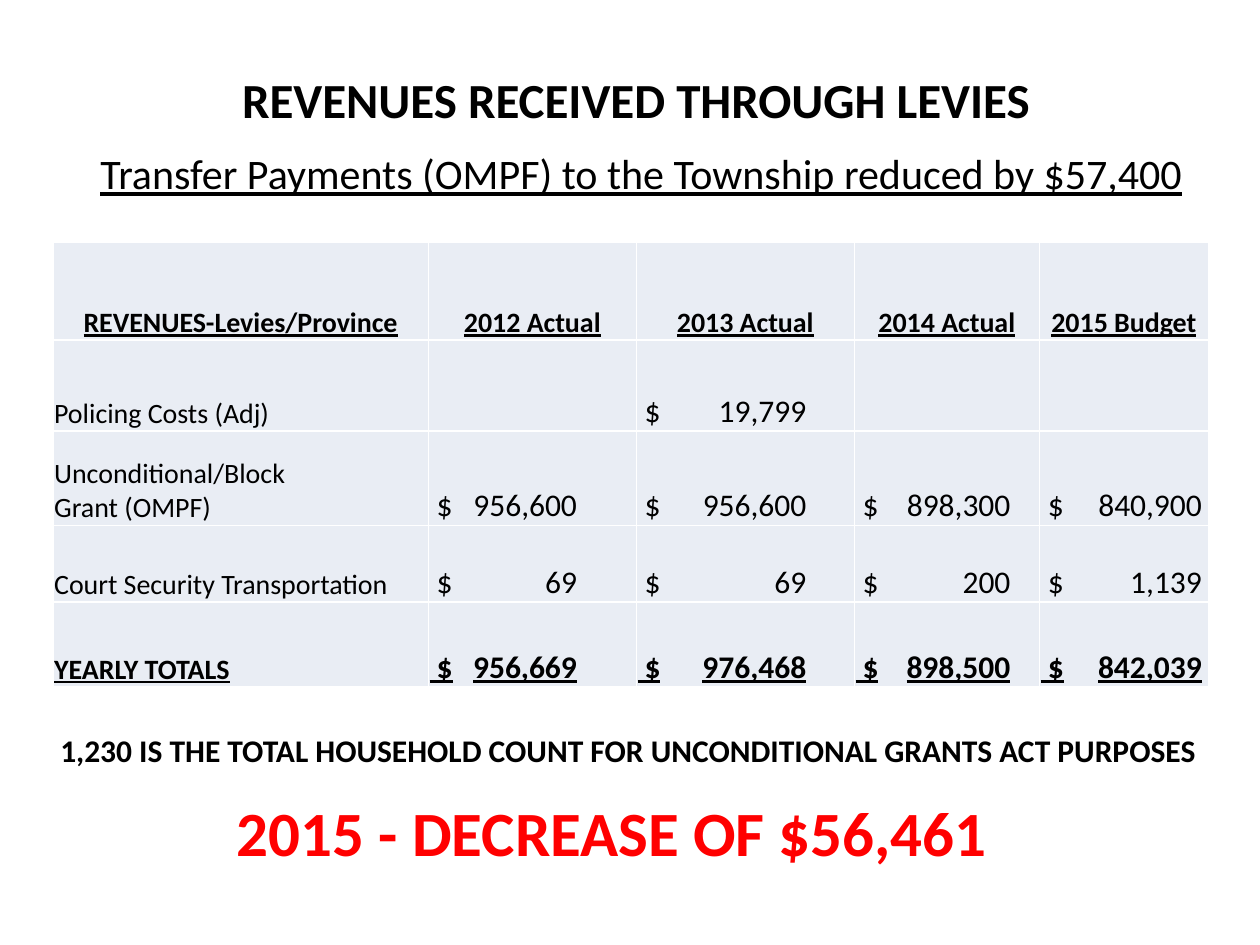
from lxml import etree
from pptx import Presentation
from pptx import util as u
from pptx.dml.color import RGBColor
from pptx.enum import text
from pptx.oxml import ns

BLACK = RGBColor(0, 0, 0)
RED = RGBColor(255, 0, 0)
WHITE = RGBColor(255, 255, 255)
PALE = RGBColor(0xE9, 0xED, 0xF4)
FONT = "Calibri"
CENTER = text.PP_ALIGN.CENTER
LEFT = text.PP_ALIGN.LEFT
UNIT = u.Inches(0.1)

COL_WIDTHS = [29.8, 16.5, 17.3, 14.7, 13.4]
ROW_HEIGHTS = [7.8, 7.2, 7.5, 6.1, 6.7]
AMOUNT_ENDS = [11.7, 13.4, 12.3, 12.8]
HEADERS = ["REVENUES-Levies/Province", "2012 Actual", "2013 Actual",
           "2014 Actual", "2015 Budget"]
REVENUES = [
    ("Policing Costs (Adj)", ["", "19,799", "", ""]),
    ("Unconditional/Block\nGrant (OMPF)",
     ["956,600", "956,600", "898,300", "840,900"]),
    ("Court Security Transportation", ["69", "69", "200", "1,139"]),
    ("YEARLY TOTALS", ["956,669", "976,468", "898,500", "842,039"]),
]


def grid(*cells):
    return [round(c * UNIT) for c in cells]


def write(tf, content, size=18, bold=False, underline=False,
          color=BLACK, align=LEFT, tab=None):
    for i, line in enumerate(content.split("\n")):
        p = tf.add_paragraph() if i else tf.paragraphs[0]
        p.alignment = align
        if tab:
            tabs = etree.SubElement(p._p.get_or_add_pPr(), ns.qn("a:tabLst"))
            etree.SubElement(tabs, ns.qn("a:tab"),
                             pos=str(round(tab * UNIT)), algn="r")
        r = p.add_run()
        r.text = line
        f = r.font
        f.name, f.size, f.bold, f.underline = FONT, u.Pt(size), bold, underline
        f.color.rgb = color


def add_title(slide, box, content):
    sp = slide.shapes.title
    sp.left, sp.top, sp.width, sp.height = grid(*box)
    tf = sp.text_frame
    tf.auto_size = text.MSO_AUTO_SIZE.NONE
    tf.vertical_anchor = text.MSO_ANCHOR.TOP
    write(tf, content, size=28, bold=True, align=CENTER)


def add_label(slide, box, content, **fmt):
    tf = slide.shapes.add_textbox(*grid(*box)).text_frame
    tf.word_wrap = True
    write(tf, content, **fmt)


def format_cell(cell):
    cell.margin_left = cell.margin_right = cell.margin_top = u.Inches(0.01)
    cell.margin_bottom = 0
    cell.vertical_anchor = text.MSO_ANCHOR.BOTTOM
    tc_pr = cell._tc.get_or_add_tcPr()
    for side in ("a:lnL", "a:lnR", "a:lnT", "a:lnB"):
        ln = etree.SubElement(tc_pr, ns.qn(side), w=str(u.Pt(1)))
        solid = etree.SubElement(ln, ns.qn("a:solidFill"))
        etree.SubElement(solid, ns.qn("a:srgbClr"), val=str(WHITE))
    cell.fill.solid()
    cell.fill.fore_color.rgb = PALE


def add_revenue_table(slide, left, top):
    box = grid(left, top, sum(COL_WIDTHS), sum(ROW_HEIGHTS))
    table = slide.shapes.add_table(
        len(ROW_HEIGHTS), len(COL_WIDTHS), *box).table
    table.first_row = table.horz_banding = False
    for col, width in zip(table.columns, grid(*COL_WIDTHS)):
        col.width = width
    for row, height in zip(table.rows, grid(*ROW_HEIGHTS)):
        row.height = height
    for cell in table.iter_cells():
        format_cell(cell)
    for c, header in enumerate(HEADERS):
        write(table.cell(0, c).text_frame, header, size=16, bold=True,
              underline=True, align=CENTER)
    for r, (name, amounts) in enumerate(REVENUES, 1):
        total = r == len(REVENUES)
        write(table.cell(r, 0).text_frame, name, size=16, bold=total,
              underline=total)
        for c, (amount, end) in enumerate(zip(amounts, AMOUNT_ENDS), 1):
            if amount:
                write(table.cell(r, c).text_frame, f" $\t{amount}",
                      bold=total, underline=total, tab=end)


def main():
    prs = Presentation()
    prs.slide_width, prs.slide_height = grid(100, 75)
    slide = prs.slides.add_slide(prs.slide_layouts[5])
    add_label(slide, (3.8, 57.5, 92.9, 4),
              "1,230 IS THE TOTAL HOUSEHOLD COUNT FOR UNCONDITIONAL "
              "GRANTS ACT PURPOSES", bold=True)
    add_title(slide, (13.8, 5, 74.2, 8.8), "REVENUES RECEIVED THROUGH LEVIES ")
    add_revenue_table(slide, 4.2, 19.2)
    add_label(slide, (3.8, 11.2, 94.2, 5),
              "Transfer Payments (OMPF) to the Township reduced by $57,400",
              size=24, underline=True, align=CENTER)
    add_label(slide, (15.8, 62.5, 66.7, 7.1), "2015 - DECREASE OF $56,461 ",
              size=36, bold=True, color=RED, align=CENTER)
    prs.save("out.pptx")


if __name__ == "__main__":
    main()
